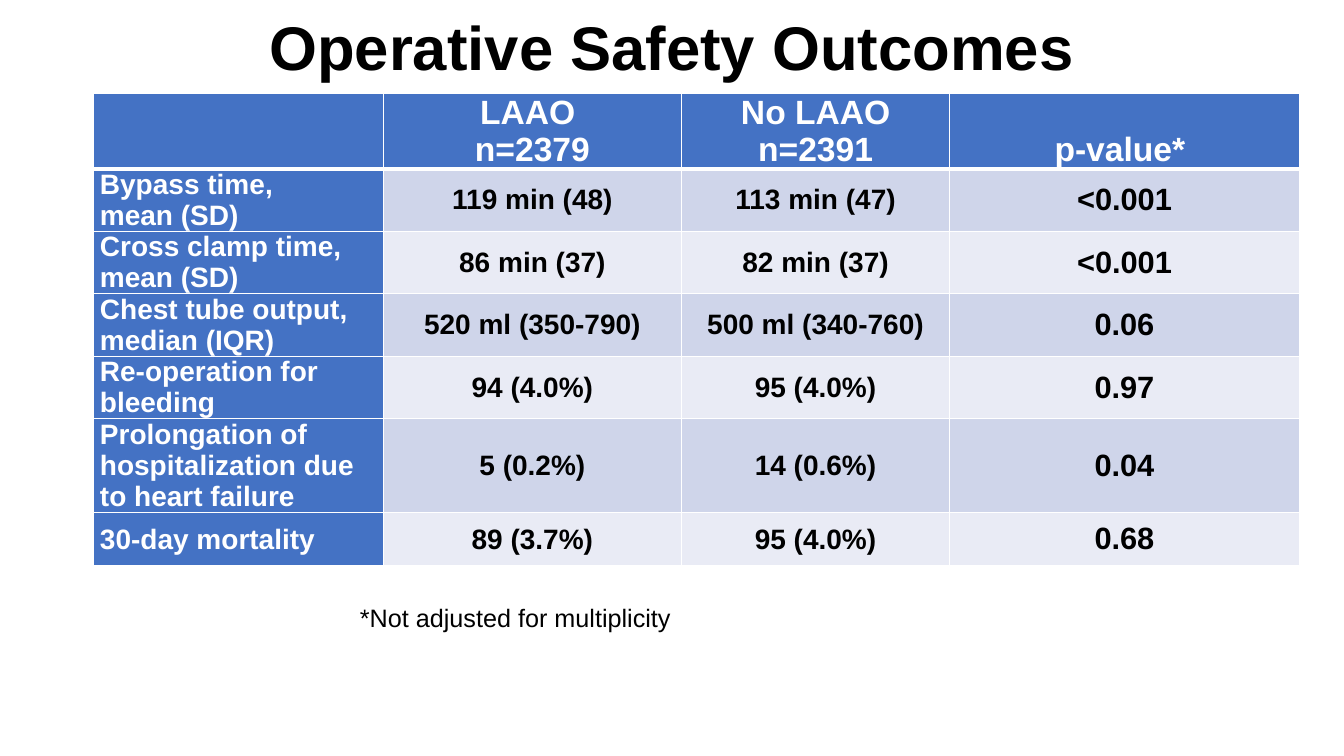
from lxml.etree import SubElement
from pptx import Presentation
from pptx.dml.color import RGBColor
from pptx.enum.text import MSO_ANCHOR as Anchor, MSO_AUTO_SIZE as AutoSize, PP_ALIGN as Align
from pptx.oxml import parse_xml
from pptx.oxml.ns import nsdecls, qn
from pptx.util import Pt

BLACK = RGBColor(0x00, 0x00, 0x00)
WHITE = RGBColor(0xFF, 0xFF, 0xFF)
NAVY = RGBColor(0x00, 0x20, 0x60)
BLUE = RGBColor(0x44, 0x72, 0xC4)
BANDS = RGBColor(0xCF, 0xD5, 0xEA), RGBColor(0xE9, 0xEB, 0xF5)

COLUMN_WIDTHS = [207.4, 213.1, 191.5, 249.8]
ROW_HEIGHTS = [38.2, 38.2, 41.8, 41.8, 42.5, 43.9, 38.2]
OUTCOMES = [
    ["", "LAAO \nn=2379", "No LAAO\nn=2391", "p-value* "],
    ["Bypass time,\nmean (SD)", "119 min (48)", "113 min (47)", "<0.001"],
    ["Cross clamp time, mean (SD)", "86 min (37)", "82 min (37)", "<0.001"],
    ["Chest tube output, median (IQR)", "520 ml (350-790)", "500 ml (340-760)", "0.06"],
    ["Re-operation for bleeding", "94 (4.0%)", "95 (4.0%)", "0.97"],
    ["Prolongation of hospitalization due to heart failure", "5 (0.2%)", "14 (0.6%)", "0.04"],
    ["30-day mortality", "89 (3.7%)", "95 (4.0%)", "0.68"],
]


def set_all(target, values):
    for name, value in values.items():
        setattr(target, name, value)


def write(frame, text, size, color, bold=True, align=Align.LEFT):
    frame.text = text
    for paragraph in frame.paragraphs:
        paragraph.alignment = align
        for run in paragraph.runs:
            set_all(run.font, {"name": "Arial", "size": Pt(size), "bold": bold})
            run.font.color.rgb = color


def add_line(parent, tag, width, color):
    line = SubElement(parent, qn(tag), w=str(Pt(width)))
    fill = SubElement(line, qn("a:solidFill"))
    SubElement(fill, qn("a:srgbClr"), val=str(color))
    return line


def add_title(slide, text):
    title = slide.shapes.title
    set_all(title, {"left": Pt(66), "top": Pt(-16), "width": Pt(828), "height": Pt(104.4)})
    set_all(title.text_frame, {"vertical_anchor": Anchor.MIDDLE, "word_wrap": True,
                               "auto_size": AutoSize.NONE})
    write(title.text_frame, text, 44, BLACK, align=Align.CENTER)
    heading = title.text_frame.paragraphs[0]
    heading.line_spacing = 0.9
    # Thin text outline, which must precede the text fill
    properties = heading.runs[0].font._element
    properties.insert(0, add_line(properties, "a:ln", 0.75, NAVY))


def format_cell(cell, text, row, column):
    header, label = row == 0, column == 0
    set_all(cell, {"margin_left": Pt(5), "margin_right": Pt(5),
                   "margin_top": 0, "margin_bottom": 0,
                   "vertical_anchor": Anchor.BOTTOM if header else Anchor.MIDDLE})
    size = 24 if header else 22 if column == 3 else 20
    write(cell.text_frame, text, size, WHITE if header or label else BLACK,
          align=Align.LEFT if label else Align.CENTER)

    # Borders come before the fill
    properties = cell._tc.get_or_add_tcPr()
    widths = {"a:lnL": 1, "a:lnR": 1, "a:lnT": 3 if row == 1 else 1, "a:lnB": 3 if header else 1}
    for tag, width in widths.items():
        add_line(properties, tag, width, WHITE)
    cell.fill.solid()
    cell.fill.fore_color.rgb = BLUE if header or label else BANDS[(row - 1) % 2]


def add_outcomes(slide):
    table = slide.shapes.add_table(
        len(OUTCOMES), len(COLUMN_WIDTHS), Pt(66.4), Pt(67),
        Pt(sum(COLUMN_WIDTHS)), Pt(sum(ROW_HEIGHTS))).table
    for column, width in zip(table.columns, COLUMN_WIDTHS):
        column.width = Pt(width)
    for row, height in zip(table.rows, ROW_HEIGHTS):
        row.height = Pt(height)
    for row, texts in enumerate(OUTCOMES):
        for column, text in enumerate(texts):
            format_cell(table.cell(row, column), text, row, column)


def add_footnote(slide, text):
    footnote = slide.shapes.add_textbox(Pt(250), Pt(427), Pt(244), Pt(29)).text_frame
    set_all(footnote, {"word_wrap": False, "auto_size": AutoSize.SHAPE_TO_FIT_TEXT})
    write(footnote, text, 18, BLACK, bold=False)


def main():
    deck = Presentation()
    set_all(deck, {"slide_width": Pt(960), "slide_height": Pt(540)})
    slide = deck.slides.add_slide(deck.slide_layouts[5])
    add_title(slide, "Operative Safety Outcomes")
    add_outcomes(slide)
    add_footnote(slide, "*Not adjusted for multiplicity")
    deck.save("out.pptx")


if __name__ == "__main__":
    main()
